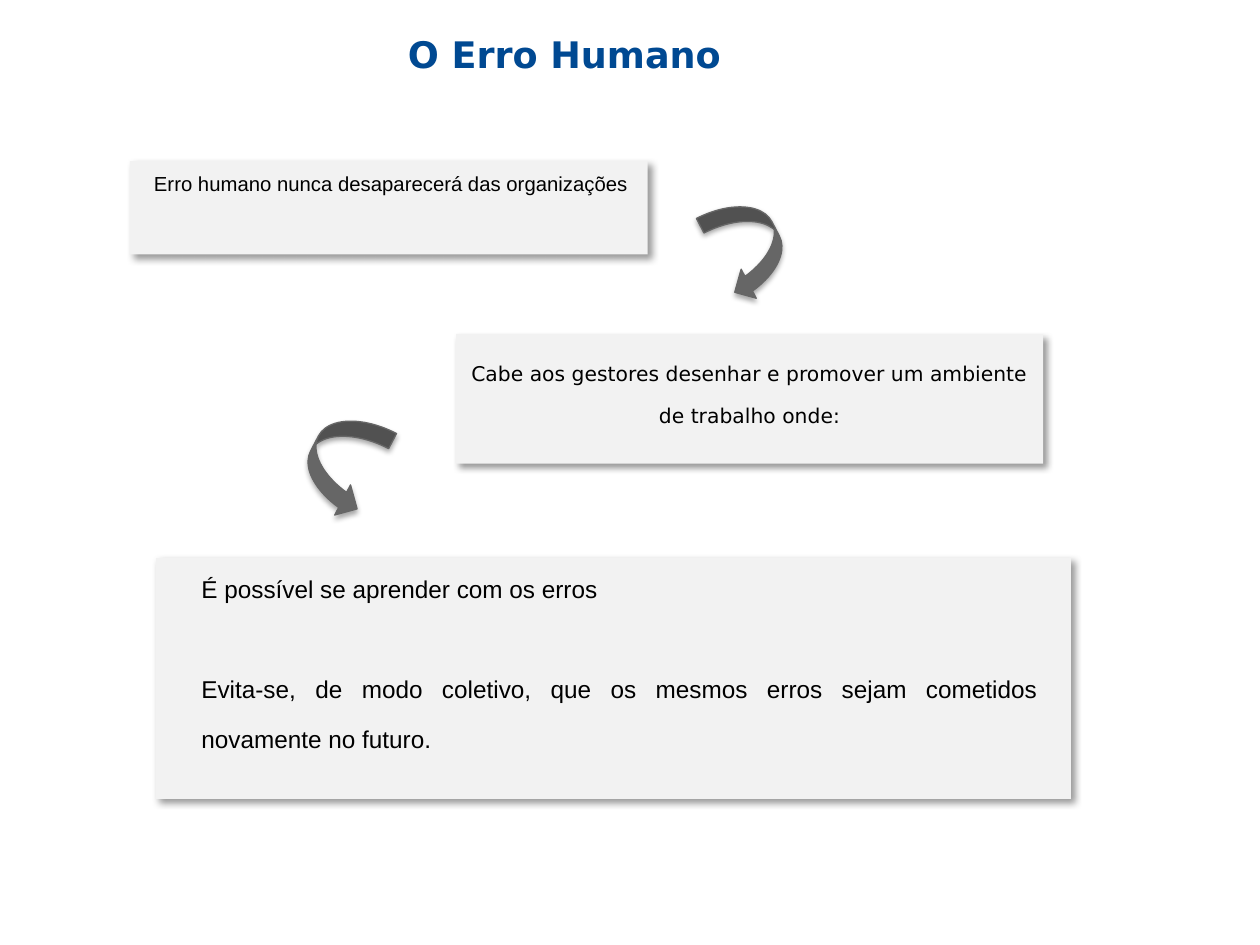
from dataclasses import dataclass

from lxml import etree
from pptx import Presentation
from pptx import util as u
from pptx.dml.color import RGBColor
from pptx.enum import shapes, text
from pptx.oxml.ns import qn


@dataclass(frozen=True)
class Theme:
    title: str = "004992"
    body: str = "000000"
    panel: str = "F2F2F2"
    arrow: str = "666666"
    plain_font: str = "Arial"
    wide_font: str = "DejaVu Sans"
    title_size: int = 36
    large_size: int = 24
    body_size: int = 20
    baseline: int = 30
    panel_shadow: tuple = (40, 4, 3, 45)
    arrow_shadow: tuple = (35, 3.1, 1.8, 90)


class SlideBuilder:
    def __init__(self, page, theme):
        self.page = page
        self.theme = theme

    def shape(self, kind, place, color, shadow):
        shape = self.page.shapes.add_shape(kind, *map(u.Inches, place))
        shape.fill.solid()
        shape.fill.fore_color.rgb = RGBColor.from_string(color)
        shape.line.fill.background()
        self.cast_shadow(shape, *shadow)
        return shape

    def cast_shadow(self, shape, alpha, blur, distance, angle):
        shape.shadow.inherit = False
        effects = shape._element.spPr.find(qn("a:effectLst"))
        outer = etree.SubElement(
            effects, qn("a:outerShdw"), blurRad=str(int(u.Pt(blur))),
            dist=str(int(u.Pt(distance))), dir=str(angle * 60000),
            algn="ctr", rotWithShape="0")
        color = etree.SubElement(outer, qn("a:srgbClr"), val="000000")
        etree.SubElement(color, qn("a:alpha"), val=str(alpha * 1000))

    def panel(self, *place):
        return self.shape(shapes.MSO_SHAPE.RECTANGLE, place,
                          self.theme.panel, self.theme.panel_shadow)

    def arrow(self, kind, place, rotation):
        arrow = self.shape(kind, place, self.theme.arrow, self.theme.arrow_shadow)
        arrow.line.color.rgb = RGBColor.from_string(self.theme.arrow)
        arrow.line.width = u.Pt(0.75)
        arrow.rotation = rotation

    def text_box(self, *place):
        return self.page.shapes.add_textbox(*map(u.Inches, place))

    def label(self, box, wording, size, font, color=None, bold=False, gap=0,
              align=text.PP_ALIGN.CENTER, anchor=text.MSO_ANCHOR.TOP):
        frame = box.text_frame
        frame.word_wrap = True
        frame.vertical_anchor = anchor
        frame.text = wording
        for index, para in enumerate(frame.paragraphs):
            para.alignment = align
            if index and gap:
                para.space_before = u.Pt(gap)
            for span in para.runs:
                span.font.size = u.Pt(size)
                span.font.name = font
                span.font.bold = bold
                span.font.color.rgb = RGBColor.from_string(color or self.theme.body)
                span._r.get_or_add_rPr().set("baseline", str(self.theme.baseline * 1000))


def main():
    deck = Presentation()
    deck.slide_width, deck.slide_height = u.Inches(10), u.Inches(7.5)
    page = deck.slides.add_slide(deck.slide_layouts[6])
    theme = Theme()
    builder = SlideBuilder(page, theme)
    middle = text.MSO_ANCHOR.MIDDLE

    builder.panel(1.03, 1.28, 4.11, 0.74)
    builder.label(builder.text_box(1.1, 1.28, 4.01, 0.55),
                  "Erro humano nunca desaparecerá das organizações",
                  theme.body_size, theme.plain_font)

    managers = builder.panel(3.62, 2.65, 4.66, 1.03)
    builder.label(managers,
                  "Cabe aos gestores desenhar e promover um ambiente de trabalho onde:",
                  theme.body_size, theme.wide_font, anchor=middle)
    builder.arrow(shapes.MSO_SHAPE.CURVED_LEFT_ARROW, (5.68, 1.57, 0.52, 0.79), 332.6)

    builder.panel(1.24, 4.43, 7.26, 1.91)
    builder.label(builder.text_box(1.5, 4.47, 6.84, 1.72),
                  "É possível se aprender com os erros\n"
                  "Evita-se, de modo coletivo, que os mesmos erros sejam cometidos "
                  "novamente no futuro.",
                  theme.large_size, theme.plain_font, gap=28,
                  align=text.PP_ALIGN.JUSTIFY)
    builder.arrow(shapes.MSO_SHAPE.CURVED_RIGHT_ARROW, (2.45, 3.27, 0.54, 0.81), 27.6)

    builder.label(builder.text_box(0.27, -0.01, 8.42, 1), "O Erro Humano",
                  theme.title_size, theme.wide_font, theme.title, bold=True,
                  anchor=middle)

    deck.save("out.pptx")


if __name__ == "__main__":
    main()
